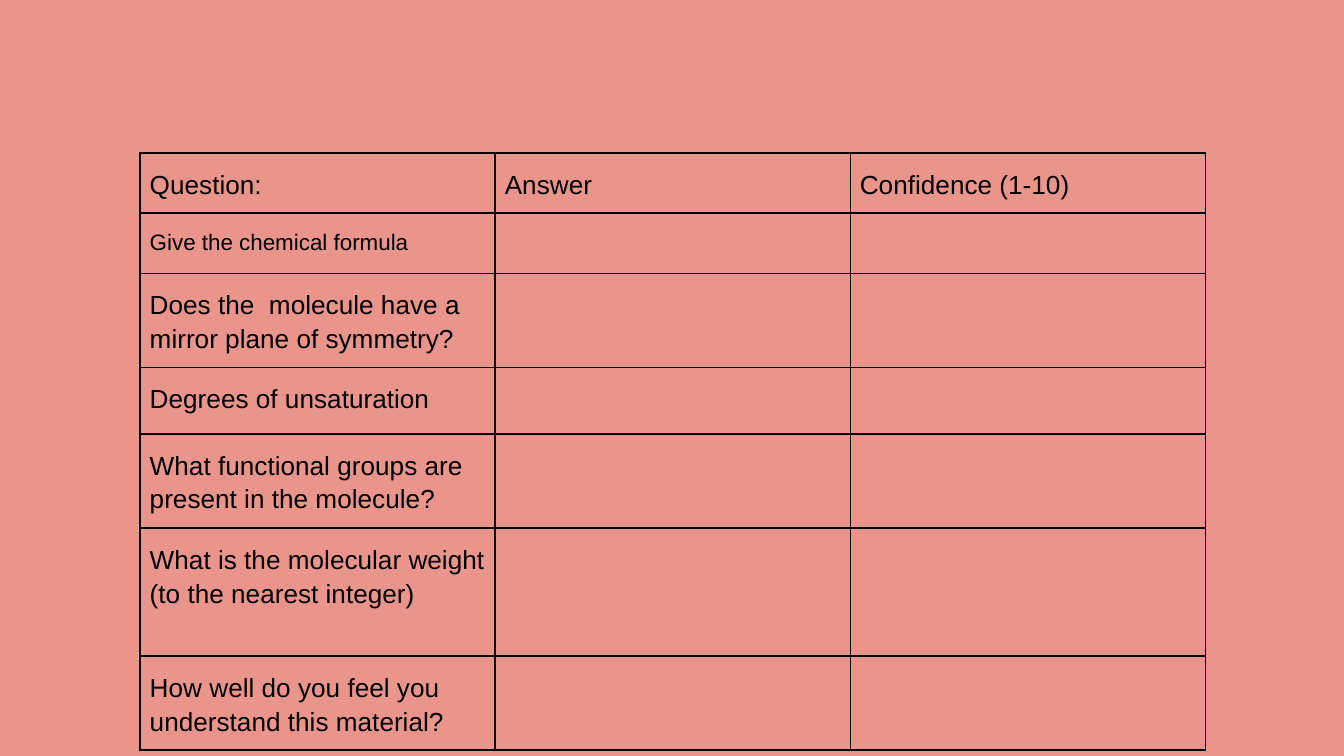
from lxml import etree
from pptx import Presentation
from pptx.dml.color import RGBColor
from pptx.oxml.ns import qn
from pptx.util import Cm, Pt

BLANK_LAYOUT = 6
FONT = "Arial"
BACKGROUND = "EA958C"
INK = "000000"
BODY_SIZE = 14
BORDER_WIDTH = 0.96

COLUMN_WIDTH = 6.71
HEADINGS = ("Question:", "Answer", "Confidence (1-10)")
HEADING_HEIGHT = 1.14

# Question, text size in points, row height in cm
QUESTIONS = (
    ("Give the chemical formula", 12, 1.14),
    ("Does the  molecule have a mirror plane of symmetry?", BODY_SIZE, 1.78),
    ("Degrees of unsaturation", BODY_SIZE, 1.25),
    ("What functional groups are present in the molecule?", BODY_SIZE, 1.78),
    ("What is the molecular weight (to the nearest integer)", BODY_SIZE, 2.42),
    ("How well do you feel you understand this material?", BODY_SIZE, 1.78),
)


def color(hex_value):
    return RGBColor.from_string(hex_value)


def add_borders(cell):
    properties = cell._tc.get_or_add_tcPr()
    for side in ("a:lnL", "a:lnR", "a:lnT", "a:lnB"):
        line = etree.SubElement(properties, qn(side), w=str(Pt(BORDER_WIDTH)))
        solid = etree.SubElement(line, qn("a:solidFill"))
        etree.SubElement(solid, qn("a:srgbClr"), val=INK)


def format_cell(cell):
    add_borders(cell)
    cell.fill.background()
    cell.margin_left = cell.margin_right = Cm(0.18)
    cell.margin_top = cell.margin_bottom = Cm(0.25)


def write_cell(cell, text, size):
    paragraph = cell.text_frame.paragraphs[0]
    paragraph.line_spacing = 1.15
    if not text:
        # The end mark keeps an empty cell from stretching its row
        etree.SubElement(paragraph._p, qn("a:endParaRPr"), sz=str(size * 100))
        return
    run = paragraph.add_run()
    run.text = text
    run.font.name = FONT
    run.font.size = Pt(size)
    run.font.bold = False
    run.font.color.rgb = color(INK)


def add_question_table(slide):
    rows = [(HEADINGS, BODY_SIZE, HEADING_HEIGHT)]
    rows += [((question, "", ""), size, height)
             for question, size, height in QUESTIONS]
    total_height = sum(height for _, _, height in rows)
    table = slide.shapes.add_table(
        len(rows), len(HEADINGS), Cm(2.65), Cm(2.89),
        Cm(COLUMN_WIDTH * len(HEADINGS)), Cm(total_height)).table
    table.first_row = False
    table.horz_banding = False

    for column in table.columns:
        column.width = Cm(COLUMN_WIDTH)
    for row, (texts, size, height) in zip(table.rows, rows):
        row.height = Cm(height)
        for cell, text in zip(row.cells, texts):
            format_cell(cell)
            write_cell(cell, text, size)


def main():
    presentation = Presentation()
    presentation.slide_width = Cm(25.4)
    presentation.slide_height = Cm(14.29)
    slide = presentation.slides.add_slide(
        presentation.slide_layouts[BLANK_LAYOUT])

    # Background
    slide.background.fill.solid()
    slide.background.fill.fore_color.rgb = color(BACKGROUND)

    # Questions with room for answers and confidence
    add_question_table(slide)

    presentation.save("out.pptx")


if __name__ == "__main__":
    main()
